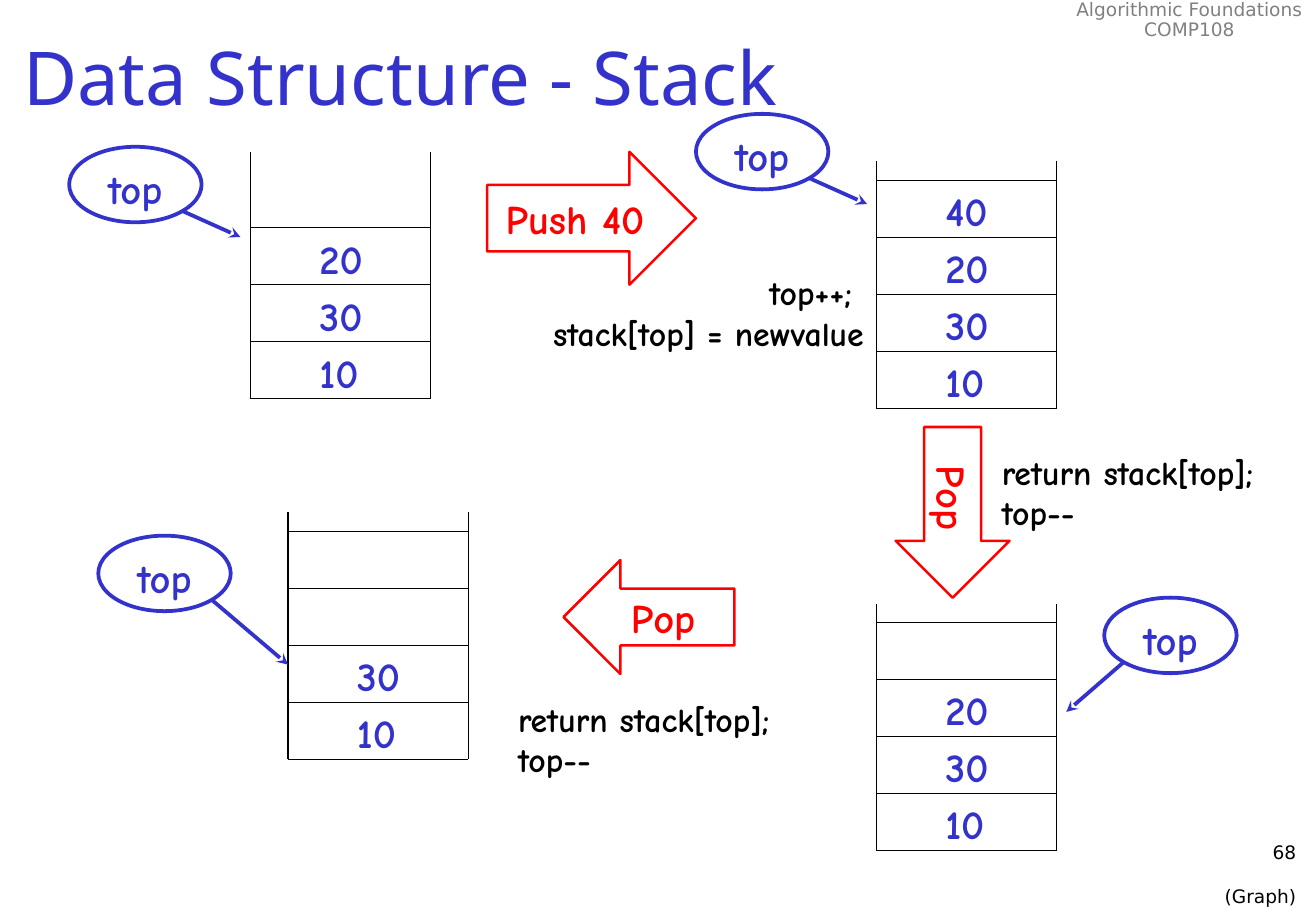
from pptx import Presentation
from pptx.dml.color import RGBColor
from pptx.enum.shapes import MSO_CONNECTOR, MSO_SHAPE
from pptx.enum.text import MSO_ANCHOR, MSO_AUTO_SIZE, PP_ALIGN
from pptx.oxml.ns import qn
from pptx.util import Pt
from lxml import etree

LEFT, CENTER, RIGHT = PP_ALIGN.LEFT, PP_ALIGN.CENTER, PP_ALIGN.RIGHT
TOP, MIDDLE = MSO_ANCHOR.TOP, MSO_ANCHOR.MIDDLE
NO_FIT = MSO_AUTO_SIZE.NONE
STRAIGHT = MSO_CONNECTOR.STRAIGHT
ELLIPSE = MSO_SHAPE.OVAL
RIGHT_ARROW, LEFT_ARROW = MSO_SHAPE.RIGHT_ARROW, MSO_SHAPE.LEFT_ARROW

BLUE, RED, BLACK, GRAY, WHITE = "3333CC", "FF0000", "000000", "808080", "FFFFFF"
HAND, SANS, HEADING = "Comic Neue", "DejaVu Sans", "Noto Sans"

STACK_W, STACK_H, ROW_H = 106.75, 146.25, 33.75
BUBBLE_W, BUBBLE_H = 78.5, 44.75
POP_CODE = "return stack[top];\ntop--"


def color(hex_string):
    return RGBColor.from_string(hex_string)


def write(tf, text, size=24, font=HAND, fill=BLUE, bold=True, align=LEFT,
          anchor=TOP, wrap=False, spacing=1.0, gap=0):
    tf.word_wrap = wrap
    tf.auto_size = NO_FIT
    tf.vertical_anchor = anchor
    for i, line in enumerate(text.split("\n")):
        p = tf.add_paragraph() if i else tf.paragraphs[0]
        p.alignment = align
        p.line_spacing = spacing
        p.space_before = Pt(gap if i else 0)
        r = p.add_run()
        r.text = line
        r.font.size = Pt(size)
        r.font.name = font
        r.font.bold = bold
        r.font.color.rgb = color(fill)


class Deck:
    def __init__(self, width, height):
        self.prs = Presentation()
        self.prs.slide_width, self.prs.slide_height = Pt(width), Pt(height)
        self.s = self.prs.slides.add_slide(self.prs.slide_layouts[5])

    def title(self, text, x, y, w, h):
        sp = self.s.shapes.title
        sp.left, sp.top, sp.width, sp.height = Pt(x), Pt(y), Pt(w), Pt(h)
        write(sp.text_frame, text, size=44, font=HEADING, bold=False,
              anchor=MIDDLE, wrap=True)

    def text(self, text, x, y, w, h, **fmt):
        sp = self.s.shapes.add_textbox(Pt(x), Pt(y), Pt(w), Pt(h))
        write(sp.text_frame, text, **fmt)

    def code(self, text, x, y, w, align=LEFT):
        self.text(text, x, y, w, 55.5, size=20, fill=BLACK, align=align, wrap=True)

    def line(self, x1, y1, x2, y2, stroke=BLACK, weight=0.75, arrow=False):
        c = self.s.shapes.add_connector(STRAIGHT, Pt(x1), Pt(y1), Pt(x2), Pt(y2))
        c.line.color.rgb = color(stroke)
        c.line.width = Pt(weight)
        if arrow:
            etree.SubElement(c.line._get_or_add_ln(), qn("a:tailEnd"), type="stealth")
        etree.SubElement(c._element.spPr, qn("a:effectLst"))

    def shape(self, kind, text, x, y, w, h, stroke, weight, fill=None,
              rotation=0, anchor=TOP):
        sp = self.s.shapes.add_shape(kind, Pt(x), Pt(y), Pt(w), Pt(h))
        sp.shadow.inherit = False
        sp.rotation = rotation
        if fill:
            sp.fill.solid()
            sp.fill.fore_color.rgb = color(fill)
        else:
            sp.fill.background()
        sp.line.color.rgb = color(stroke)
        sp.line.width = Pt(weight)
        write(sp.text_frame, text, fill=stroke, align=CENTER, anchor=anchor)

    def block_arrow(self, kind, text, x, y, w, h, rotation=0):
        self.shape(kind, text, x, y, w, h, RED, 1.5, WHITE, rotation, MIDDLE)

    def top_pointer(self, x, y, tip_x, tip_y):
        self.shape(ELLIPSE, "top", x, y, BUBBLE_W, BUBBLE_H, BLUE, 2.25)
        start_x = x + (67.5 if tip_x > x else 11.5)
        self.line(start_x, y + 38.25, tip_x, tip_y, BLUE, 2.25, arrow=True)

    def stack(self, x, y, values, rows=4):
        right, bottom = x + STACK_W, y + STACK_H
        for wall in (x, right):
            self.line(wall, y, wall, bottom)
        for i in range(rows + 1):
            self.line(x, bottom - i * ROW_H, right, bottom - i * ROW_H)
        for i, value in enumerate(values, 1):
            self.text(value, x + 33.75, bottom - i * ROW_H, 44, 36.5)


def main():
    d = Deck(780, 540)
    d.text("Algorithmic Foundations\nCOMP108", 630, -3, 150, 31, size=11,
           font=SANS, fill=GRAY, bold=False, align=CENTER, spacing=0.9)
    d.title("Data Structure - Stack", 6.5, 0, 773, 90)
    d.text("68\n(Graph)", 612.75, 494.75, 162.75, 36, size=11, font=SANS,
           fill=BLACK, bold=False, align=RIGHT, wrap=True, gap=13)

    d.stack(148.5, 90, ["10", "30", "20"], rows=3)
    d.top_pointer(41, 87, 142.5, 140.5)

    d.block_arrow(RIGHT_ARROW, "Push 40", 288.75, 90, 123.75, 78.75)
    d.code("top++; \nstack[top] = newvalue", 288.75, 157.75, 230.5, RIGHT)

    d.stack(519.5, 95.75, ["10", "30", "20", "40"])
    d.top_pointer(412.5, 67.5, 514, 121)

    d.block_arrow(RIGHT_ARROW, "Pop", 514, 270, 101.25, 67.5, rotation=90)
    d.code(POP_CODE, 586.75, 264.25, 191.5)

    d.stack(519.5, 357.75, ["10", "30", "20"])
    d.top_pointer(654.5, 354.25, 632, 422)

    d.block_arrow(LEFT_ARROW, "Pop", 334, 332, 101.25, 67.5)
    d.code(POP_CODE, 300, 410.5, 191.5)

    d.stack(170.75, 303.75, ["10", "30"])
    d.top_pointer(58.25, 317.5, 170.75, 394)

    d.prs.save("out.pptx")


if __name__ == "__main__":
    main()
